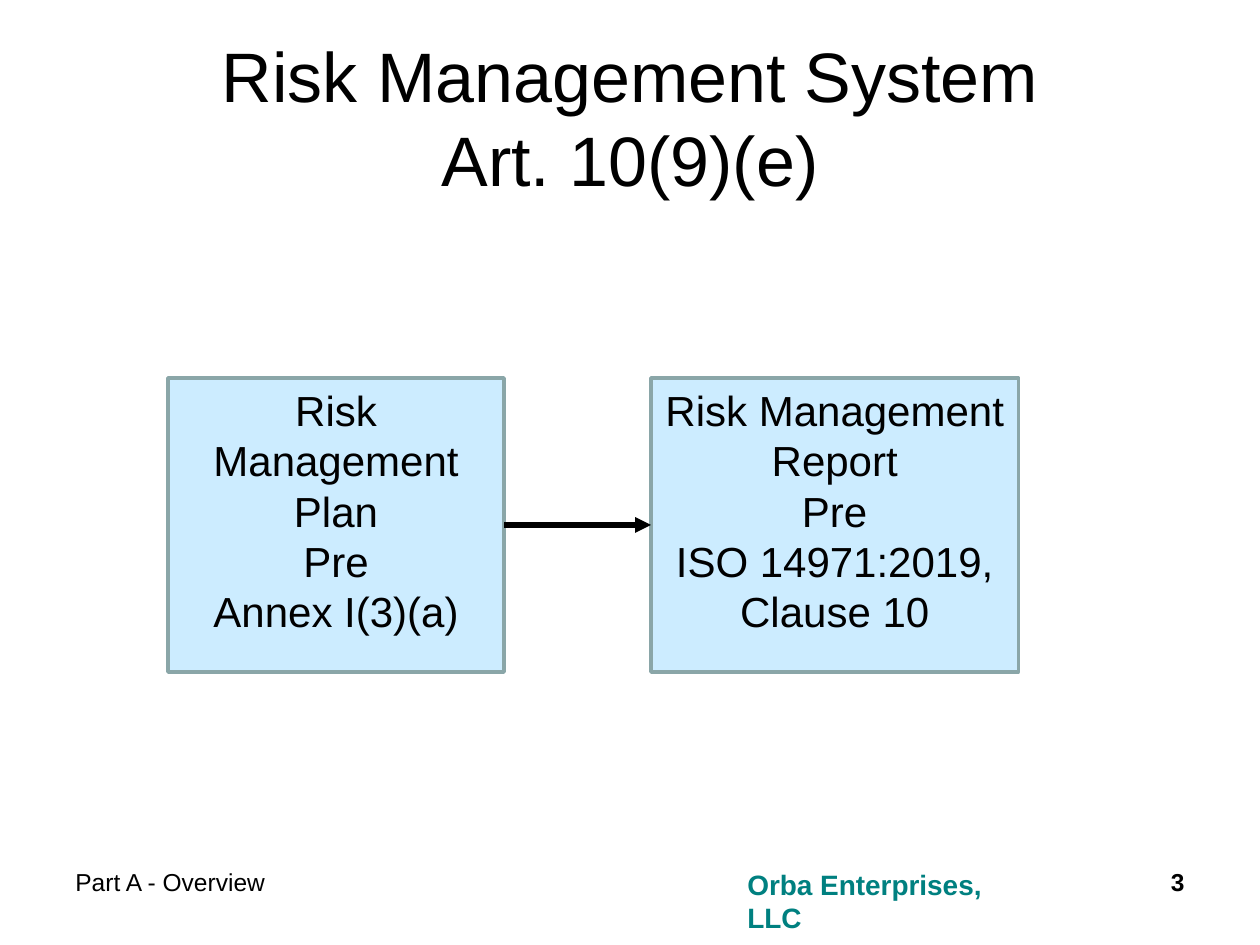
import pptx
import pptx.util
import pptx.dml.color
import pptx.enum.text
import pptx.enum.shapes
import pptx.oxml

Pt = pptx.util.Pt
RGB = pptx.dml.color.RGBColor
Align = pptx.enum.text.PP_ALIGN
Anchor = pptx.enum.text.MSO_ANCHOR
BLACK = RGB(0x00, 0x00, 0x00)
TEAL = RGB(0x00, 0x80, 0x80)
SKY = RGB(0xCC, 0xEC, 0xFF)
GREY = RGB(0x8A, 0xA6, 0xA8)


def write(shape, lines, size, color=BLACK, bold=False, align=Align.LEFT, anchor=Anchor.TOP):
    frame = shape.text_frame
    form = {"word_wrap": True, "auto_size": pptx.enum.text.MSO_AUTO_SIZE.NONE,
            "vertical_anchor": anchor}
    for key, value in form.items():
        setattr(frame, key, value)
    frame.text = "\n".join(lines)
    for para in frame.paragraphs:
        para.alignment = align
        for run in para.runs:
            for key, value in {"name": "Arial", "size": Pt(size), "bold": bold}.items():
                setattr(run.font, key, value)
            run.font.color.rgb = color


deck = pptx.Presentation()
deck.slide_width, deck.slide_height = Pt(720), Pt(540)
slide = deck.slides.add_slide(deck.slide_layouts[5])
shapes = slide.shapes

# Title
title = shapes.title
place = {"left": 36, "top": 21.6, "width": 648, "height": 90}
for key, value in place.items():
    setattr(title, key, Pt(value))
write(title, ["Risk Management System\vArt. 10(9)(e)"], 40,
      align=Align.CENTER, anchor=Anchor.MIDDLE)

# Footer: part, company, page number
foot = [
    (36, 372, 37.5, "Part A - Overview", {"size": 14}),
    (420, 168, 27, "Orba Enterprises, LLC", {"size": 16, "color": TEAL, "bold": True}),
    (606, 78, 37.5, "3", {"size": 14, "bold": True, "align": Align.RIGHT}),
]
for left, width, height, text, form in foot:
    box = shapes.add_textbox(Pt(left), Pt(492), Pt(width), Pt(height))
    write(box, [text], **form)

# Plan and report boxes
top, high = 216, 168
steps = [
    (96, 192, ["Risk Management Plan", "Pre", "Annex I(3)(a)"]),
    (372, 210, ["Risk Management Report", "Pre", "ISO 14971:2019, Clause 10"]),
]
boxes = []
for left, width, lines in steps:
    box = shapes.add_shape(pptx.enum.shapes.MSO_SHAPE.RECTANGLE,
                           Pt(left), Pt(top), Pt(width), Pt(high))
    box.shadow.inherit = False
    box.fill.solid()
    box.fill.fore_color.rgb = SKY
    box.line.color.rgb = GREY
    box.line.width = Pt(2)
    write(box, lines, 24, align=Align.CENTER)
    boxes.append(box)

# Arrow from plan to report
plan, report = boxes
mid = Pt(top + high / 2)
arrow = shapes.add_connector(pptx.enum.shapes.MSO_CONNECTOR.STRAIGHT,
                             plan.left + plan.width, mid, report.left, mid)
arrow.begin_connect(plan, 3)
arrow.end_connect(report, 1)
arrow.line.color.rgb = BLACK
arrow.line.width = Pt(3)
space = 'xmlns:a="http://schemas.openxmlformats.org/drawingml/2006/main"'
arrow.line._get_or_add_ln().append(pptx.oxml.parse_xml(f'<a:tailEnd {space} type="triangle"/>'))
arrow._element.spPr.append(pptx.oxml.parse_xml(f"<a:effectLst {space}/>"))

deck.save("out.pptx")
